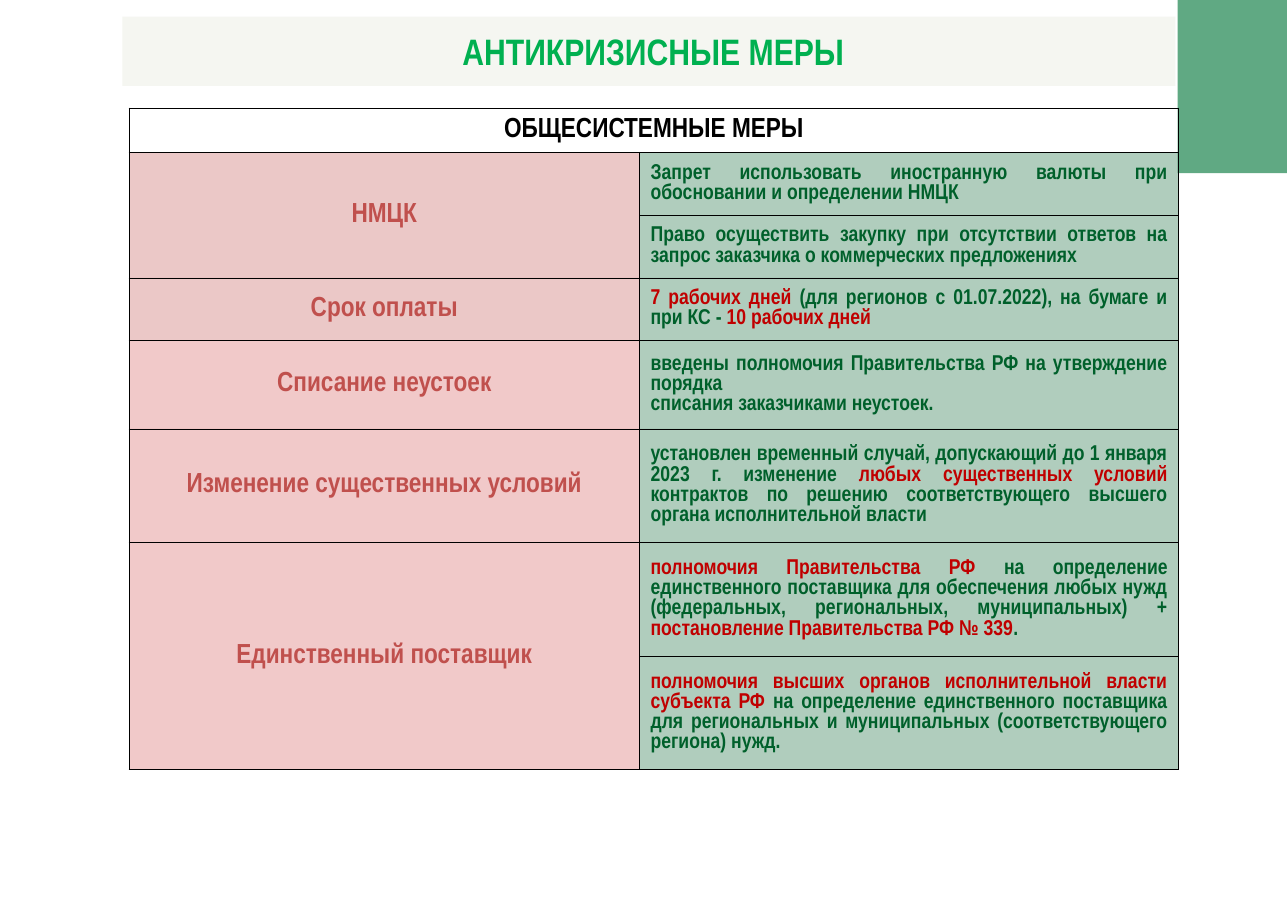
from typing import NamedTuple

from lxml.etree import SubElement
from pptx import Presentation
from pptx.dml.color import RGBColor
from pptx.enum.shapes import MSO_SHAPE
from pptx.enum.text import MSO_ANCHOR, MSO_AUTO_SIZE, PP_ALIGN
from pptx.oxml.ns import qn
from pptx.util import Inches, Pt

FONT = "Arial Narrow"
BLACK, GREEN, RED, ROSE = "000000", "00602B", "C00000", "C0504D"


class Run(NamedTuple):
    text: str
    color: str = GREEN


class Tint(NamedTuple):
    color: str
    alpha: int


class Block(NamedTuple):
    left: float
    top: float
    width: float
    height: float
    tint: Tint


class Group(NamedTuple):
    label: str
    tint: Tint
    rules: list[list[list[Run]]]  # cells, paragraphs, runs


BAND = Block(1.11, 0.15, 9.55, 0.63, Tint("F5F6F1", 100))
CORNER = Block(10.68, 0, 0.99, 1.57, Tint("077A3E", 64))
LEAF, BRICK, BLUSH = Tint(GREEN, 31), Tint(ROSE, 31), Tint(RED, 21)
COLS = [4.63, 4.89]
ROWS = [0.4, 0.57, 0.57, 0.57, 0.8, 1.03, 1.03, 1.03]

GROUPS = [
    Group("НМЦК", BRICK, [
        [[Run("Запрет использовать иностранную валюты при обосновании и определении НМЦК")]],
        [[Run("Право осуществить закупку при отсутствии ответов на запрос заказчика "
              "о коммерческих предложениях")]],
    ]),
    Group("Срок оплаты", BRICK, [
        [[Run("7 рабочих дней ", RED),
          Run("(для регионов с 01.07.2022), на бумаге и при КС - "),
          Run("10 рабочих дней", RED)]],
    ]),
    Group("Списание неустоек", BLUSH, [
        [[Run("введены полномочия Правительства РФ на утверждение порядка ")],
         [Run("списания заказчиками неустоек.")]],
    ]),
    Group("Изменение существенных условий", BLUSH, [
        [[Run("установлен временный случай, допускающий до 1 января 2023 г. изменение "),
          Run("любых существенных условий ", RED),
          Run("контрактов по решению соответствующего высшего органа "
              "исполнительной власти")]],
    ]),
    Group("Единственный поставщик", BLUSH, [
        [[Run("полномочия Правительства РФ ", RED),
          Run("на определение единственного поставщика для обеспечения любых нужд "
              "(федеральных, региональных, муниципальных) + "),
          Run("постановление Правительства РФ № 339", RED),
          Run(".")]],
        [[Run("полномочия высших органов исполнительной власти субъекта РФ ", RED),
          Run("на определение единственного поставщика для региональных и "
              "муниципальных (соответствующего региона) нужд.")]],
    ]),
]


def rgb(code: str) -> RGBColor:
    return RGBColor.from_string(code)


def paint(fill, props, tint: Tint) -> None:
    fill.solid()
    fill.fore_color.rgb = rgb(tint.color)
    if tint.alpha < 100:
        color = props.find(qn("a:solidFill"))[0]
        SubElement(color, qn("a:alpha"), val=str(tint.alpha * 1000))


def write(frame, paras: list[list[Run]], size: float, align) -> None:
    frame.word_wrap = True
    for i, runs in enumerate(paras):
        para = frame.add_paragraph() if i else frame.paragraphs[0]
        para.alignment = align
        for item in runs:
            run = para.add_run()
            run.text = item.text
            run.font.name = FONT
            run.font.size = Pt(size)
            run.font.bold = True
            run.font.color.rgb = rgb(item.color)


def draw(slide, block: Block):
    box = [Inches(n) for n in block[:4]]
    shape = slide.shapes.add_shape(MSO_SHAPE.RECTANGLE, *box)
    shape.shadow.inherit = False
    shape.line.fill.background()
    paint(shape.fill, shape.element.spPr, block.tint)
    return shape


def frame_cell(cell) -> None:
    props = cell._tc.get_or_add_tcPr()
    for side in ("lnL", "lnR", "lnT", "lnB"):
        line = SubElement(props, qn(f"a:{side}"), w=str(Pt(0.5)))
        fill = SubElement(line, qn("a:solidFill"))
        SubElement(fill, qn("a:srgbClr"), val=BLACK)


def fill_cell(cell, paras: list[list[Run]], size: float, align,
              tint: Tint | None = None) -> None:
    cell.vertical_anchor = MSO_ANCHOR.MIDDLE
    if tint:
        paint(cell.fill, cell._tc.tcPr, tint)
    else:
        cell.fill.background()
    write(cell.text_frame, paras, size, align)


def add_title(slide, band) -> None:
    title = slide.shapes.title
    title.left, title.top = Inches(1.55), Inches(0.21)
    title.width, title.height = Inches(8.75), Inches(0.5)
    title.text_frame.auto_size = MSO_AUTO_SIZE.NONE
    write(title.text_frame, [[Run("АНТИКРИЗИСНЫЕ МЕРЫ", "00B050")]], 24, PP_ALIGN.CENTER)
    band.element.addnext(title.element)


def add_grid(slide) -> None:
    grid = slide.shapes.add_table(
        len(ROWS), len(COLS), Inches(1.17), Inches(0.98),
        Inches(sum(COLS)), Inches(sum(ROWS))).table
    grid.first_row = grid.horz_banding = False
    for col, width in zip(grid.columns, COLS):
        col.width = Inches(width)
    for row, height in zip(grid.rows, ROWS):
        row.height = Inches(height)
    for cell in grid.iter_cells():
        frame_cell(cell)

    # Heading row
    head = grid.cell(0, 0)
    head.merge(grid.cell(0, 1))
    fill_cell(head, [[Run("ОБЩЕСИСТЕМНЫЕ МЕРЫ", BLACK)]], 18, PP_ALIGN.CENTER)

    # Each label spans its rules
    top = 1
    for group in GROUPS:
        count = len(group.rules)
        label = grid.cell(top, 0)
        if count > 1:
            label.merge(grid.cell(top + count - 1, 0))
        fill_cell(label, [[Run(group.label, ROSE)]], 18, PP_ALIGN.CENTER, group.tint)
        for i, rule in enumerate(group.rules):
            fill_cell(grid.cell(top + i, 1), rule, 14, PP_ALIGN.JUSTIFY, LEAF)
        top += count


def main() -> None:
    deck = Presentation()
    deck.slide_width, deck.slide_height = Inches(11.68), Inches(8.26)
    slide = deck.slides.add_slide(deck.slide_layouts[5])
    # Title band and corner
    add_title(slide, draw(slide, BAND))
    draw(slide, CORNER)
    # Table of measures
    add_grid(slide)
    deck.save("out.pptx")


if __name__ == "__main__":
    main()
